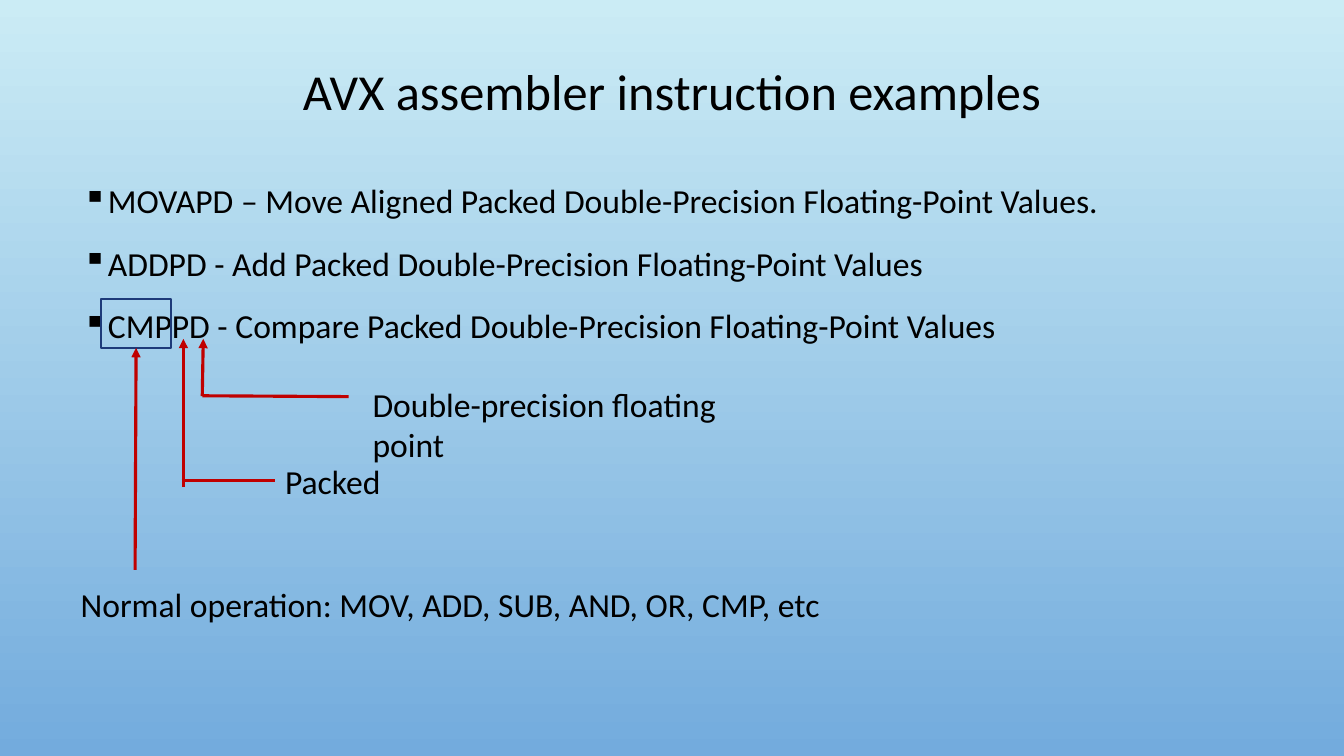
"""Build the slide on AVX assembler instruction examples."""
from lxml.etree import SubElement
from pptx import Presentation
from pptx.dml.color import RGBColor
from pptx.enum.shapes import MSO_CONNECTOR, MSO_SHAPE
from pptx.enum.text import MSO_ANCHOR, PP_ALIGN
from pptx.oxml.ns import qn
from pptx.util import Pt

TITLE = "AVX assembler instruction examples"
INSTRUCTIONS = [
    "MOVAPD – Move Aligned Packed Double-Precision Floating-Point Values.",
    "ADDPD - Add Packed Double-Precision Floating-Point Values",
    "CMPPD - Compare Packed Double-Precision Floating-Point Values",
]
EXPLANATIONS = [
    ("Packed", (196.5, 325.5, 84, 36)),
    ("Double-precision floating point", (259, 270.7, 311, 36)),
    ("Normal operation: MOV, ADD, SUB, AND, OR, CMP, etc", (50.5, 413.3, 544, 36)),
]
TITLE_AREA = (72, 23, 816, 88.5)
INSTRUCTION_AREA = (52, 119.5, 816, 145)
MNEMONIC_AREA = (72, 213.5, 50.4, 35)
POINTERS = [
    ((144.5, 283), (145.2, 242), True),
    ((144.5, 282.7), (249, 283.3), False),
    ((131, 348), (131, 242), True),
    ((129.8, 343.3), (196.5, 343.3), False),
]
OPERATION_POINTER = ((96.5, 407), (97.2, 248.5), True)

THEME = {
    "font": "Calibri",
    "title_size": Pt(36),
    "text_size": Pt(24),
    "ink": RGBColor.from_string("000000"),
    "pointer": RGBColor.from_string("C00000"),
    "frame": RGBColor.from_string("1D3A79"),
    "sky": [RGBColor.from_string("CBECF5"), RGBColor.from_string("73ABDD")],
}


def apply(target, **values):
    for name, value in values.items():
        setattr(target, name, value)


def add_bullet(paragraph):
    properties = paragraph._p.get_or_add_pPr()
    properties.set("marL", str(Pt(18)))
    properties.set("indent", str(-Pt(18)))
    bullet_color = SubElement(properties, qn("a:buClr"))
    SubElement(bullet_color, qn("a:srgbClr"), val=str(THEME["ink"]))
    SubElement(properties, qn("a:buChar"), char="▪")


def add_text(slide, lines, area, size=THEME["text_size"], anchor=MSO_ANCHOR.TOP,
             bulleted=False, **spacing):
    frame = slide.shapes.add_textbox(*map(Pt, area)).text_frame
    apply(frame, word_wrap=True, vertical_anchor=anchor)
    for index, line in enumerate(lines):
        paragraph = frame.add_paragraph() if index else frame.paragraphs[0]
        if bulleted:
            add_bullet(paragraph)
        apply(paragraph, **spacing)
        if index == 0:
            paragraph.space_before = Pt(0)
        run = paragraph.add_run()
        run.text = line
        apply(run.font, name=THEME["font"], size=size)
        run.font.color.rgb = THEME["ink"]


def add_pointer(slide, start, end, arrow):
    pointer = slide.shapes.add_connector(
        MSO_CONNECTOR.STRAIGHT, *map(Pt, start + end))
    pointer.line.width = Pt(2.25)
    pointer.line.color.rgb = THEME["pointer"]
    if arrow:
        SubElement(pointer.line._get_or_add_ln(), qn("a:tailEnd"), type="triangle")
    SubElement(pointer._element.spPr, qn("a:effectLst"))
    return pointer


def add_mnemonic_frame(slide):
    mnemonic = slide.shapes.add_shape(MSO_SHAPE.RECTANGLE, *map(Pt, MNEMONIC_AREA))
    mnemonic.shadow.inherit = False
    mnemonic.fill.background()
    mnemonic.line.width = Pt(1.25)
    mnemonic.line.color.rgb = THEME["frame"]
    return mnemonic


def main():
    deck = Presentation()
    apply(deck, slide_width=Pt(960), slide_height=Pt(540))
    slide = deck.slides.add_slide(deck.slide_layouts[6])
    sky = slide.background.fill
    sky.gradient()
    sky.gradient_angle = 270
    for stop, color in zip(sky.gradient_stops, THEME["sky"]):
        stop.color.rgb = color

    add_text(slide, [TITLE], TITLE_AREA, THEME["title_size"], MSO_ANCHOR.MIDDLE,
             alignment=PP_ALIGN.CENTER, line_spacing=0.9)
    add_text(slide, INSTRUCTIONS, INSTRUCTION_AREA, bulleted=True,
             line_spacing=1.2, space_before=Pt(10))
    for explanation, area in EXPLANATIONS:
        add_text(slide, [explanation], area)

    mnemonic = add_mnemonic_frame(slide)
    for pointer in POINTERS:
        add_pointer(slide, *pointer)
    add_pointer(slide, *OPERATION_POINTER).end_connect(mnemonic, 2)
    deck.save("out.pptx")


if __name__ == "__main__":
    main()
